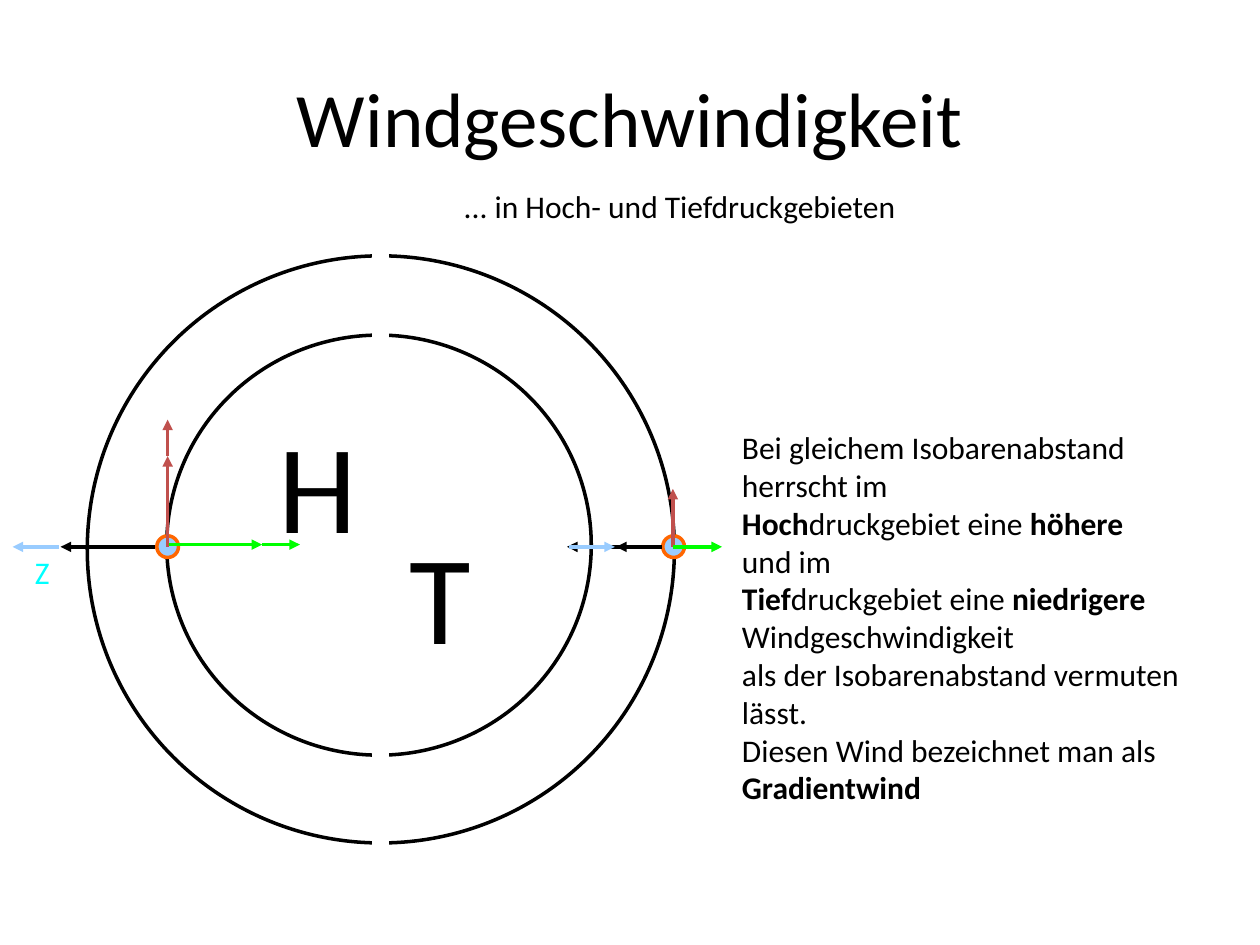
from lxml import etree
from pptx import Presentation
from pptx.dml.color import RGBColor
from pptx.enum.shapes import MSO_CONNECTOR, MSO_SHAPE
from pptx.enum.text import MSO_ANCHOR, PP_ALIGN
from pptx.oxml.ns import qn
from pptx.util import Pt

BLACK, WHITE, RED, GREEN = "000000", "FFFFFF", "C0504D", "00FF00"
LIGHT_BLUE, ORANGE, CYAN = "99CCFF", "FF6600", "00FFFF"


def rgb(color):
    return RGBColor.from_string(color)


def add_line(x1, y1, x2, y2, color, width=2, arrow=True):
    line = slide.shapes.add_connector(
        MSO_CONNECTOR.STRAIGHT, Pt(x1), Pt(y1), Pt(x2), Pt(y2))
    line.line.color.rgb = rgb(color)
    line.line.width = Pt(width)
    properties = line.line._get_or_add_ln()
    if arrow:
        etree.SubElement(properties, qn("a:tailEnd"), type="triangle")
    etree.SubElement(properties.getparent(), qn("a:effectLst"))


presentation = Presentation()
presentation.slide_width, presentation.slide_height = Pt(720), Pt(540)
slide = presentation.slides.add_slide(presentation.slide_layouts[5])

title = slide.shapes.title
title.left, title.top, title.width, title.height = Pt(36), Pt(21.6), Pt(648), Pt(90)
title.text_frame.text = "Windgeschwindigkeit"
title.text_frame.vertical_anchor = MSO_ANCHOR.MIDDLE
heading = title.text_frame.paragraphs[0]
heading.alignment = PP_ALIGN.CENTER
heading.runs[0].font.size = Pt(44)
heading.runs[0].font.name = "Calibri"
heading.runs[0].font.color.rgb = rgb(BLACK)

# Isobars, then the two air parcels: left, top, width, height, fill, outline
for left, top, width, height, fill, outline in [
    (49.9, 146.2, 335.5, 335.5, None, BLACK),
    (95.3, 191.5, 242.6, 240, None, BLACK),
    (89.6, 306.2, 12.4, 12.4, LIGHT_BLUE, ORANGE),
    (378.7, 306.2, 12.4, 12.4, LIGHT_BLUE, ORANGE),
]:
    circle = slide.shapes.add_shape(
        MSO_SHAPE.OVAL, Pt(left), Pt(top), Pt(width), Pt(height))
    circle.shadow.inherit = False
    if fill:
        circle.fill.solid()
        circle.fill.fore_color.rgb = rgb(fill)
    else:
        circle.fill.background()
    circle.line.color.rgb = rgb(outline)
    circle.line.width = Pt(2)

# White strip that parts the high (left) from the low (right)
add_line(217.4, 145.4, 217.4, 483.8, WHITE, width=10, arrow=False)

axis = 312.5
for x1, y1, x2, y2, color in [
    # High pressure
    (88.6, axis, 34.6, axis, BLACK),
    (33.8, axis, 7.2, axis, LIGHT_BLUE),
    (95.8, axis, 95.8, 260.6, RED),
    (96.5, 311.2, 149.8, 311.2, GREEN),
    (95.8, 260.6, 95.8, 239.8, RED),
    (149.8, 311.2, 171.4, 311.2, GREEN),
    # Low pressure
    (377.3, axis, 324, axis, BLACK),
    (325.4, axis, 351.4, axis, LIGHT_BLUE),
    (384.5, axis, 384.5, 279.4, RED),
    (378, axis, 352.1, axis, BLACK),
    (384.5, axis, 412.6, axis, GREEN),
]:
    add_line(x1, y1, x2, y2, color)

# Each paragraph is a list of (text, bold) runs
explanation = [
    [("Bei gleichem Isobarenabstand", False)],
    [("herrscht im", False)],
    [("Hoch", True), ("druckgebiet eine ", False), ("höhere", True)],
    [("und im", False)],
    [("Tief", True), ("druckgebiet eine ", False), ("niedrigere", True),
     (" Windgeschwindigkeit", False)],
    [("als der Isobarenabstand vermuten lässt.", False)],
    [("Diesen Wind bezeichnet man als", False)],
    [("Gradientwind", True)],
]
subtitle = [[("... in Hoch- und Tiefdruckgebieten", False)]]
centre, left_aligned = PP_ALIGN.CENTER, PP_ALIGN.LEFT

for left, top, width, height, paragraphs, size, color, alignment in [
    (256.3, 103, 264.2, 28.8, subtitle, 18, BLACK, centre),
    (11.5, 312.5, 25.2, 28.8, [[("Z", False)]], 18, CYAN, centre),
    (148.3, 229, 66.2, 93.6, [[("H", False)]], 72, BLACK, centre),
    (222.5, 293, 58.3, 93.6, [[("T", False)]], 72, BLACK, centre),
    (416.9, 213.8, 303.1, 277.9, explanation, 18, BLACK, left_aligned),
]:
    frame = slide.shapes.add_textbox(
        Pt(left), Pt(top), Pt(width), Pt(height)).text_frame
    frame.word_wrap = paragraphs is explanation
    frame.vertical_anchor = MSO_ANCHOR.MIDDLE
    for index, runs in enumerate(paragraphs):
        paragraph = frame.add_paragraph() if index else frame.paragraphs[0]
        paragraph.alignment = alignment
        for text, bold in runs:
            run = paragraph.add_run()
            run.text = text
            run.font.name = "Calibri"
            run.font.size = Pt(size)
            run.font.bold = bold
            run.font.color.rgb = rgb(color)

presentation.save("out.pptx")
